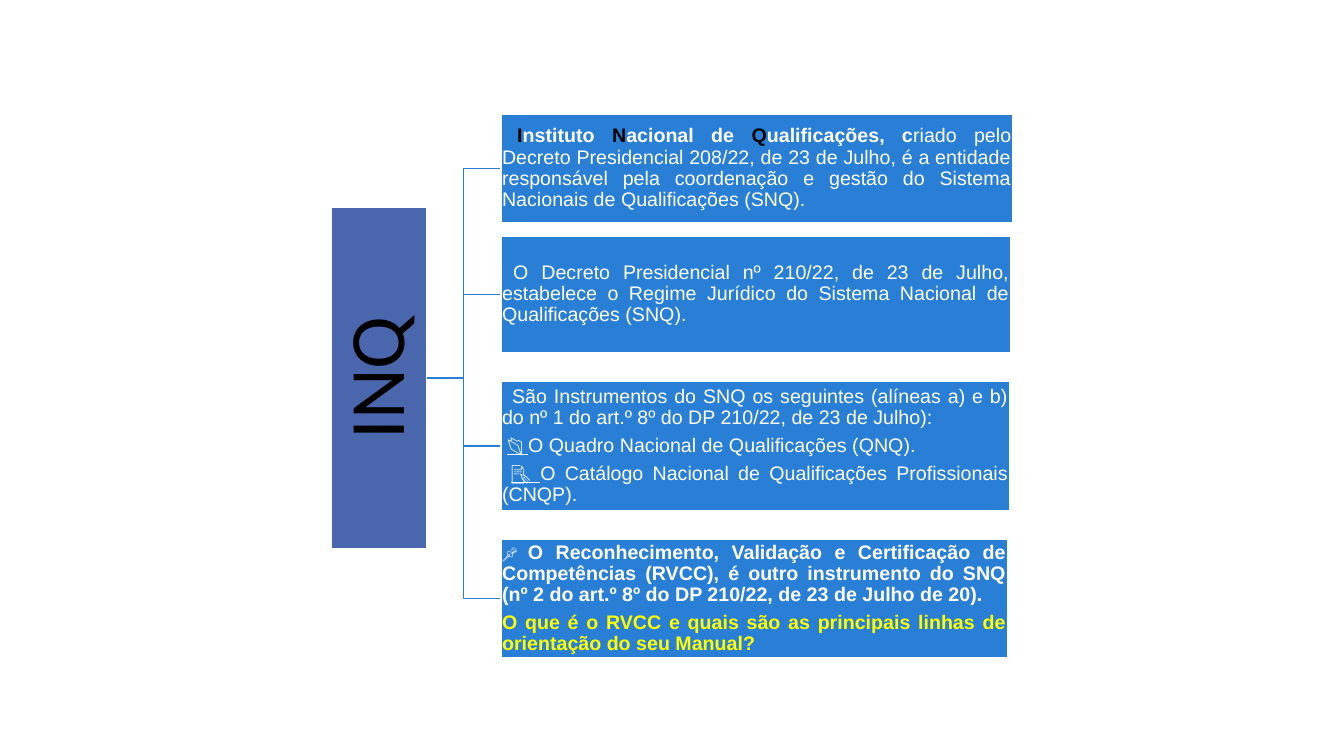
from pptx import Presentation
from pptx.dml.color import RGBColor
from pptx.enum.shapes import MSO_CONNECTOR, MSO_SHAPE
from pptx.enum.text import MSO_ANCHOR, PP_ALIGN
from pptx.oxml.ns import qn
from pptx.util import Inches, Pt

RECT, ELBOW = MSO_SHAPE.RECTANGLE, MSO_CONNECTOR.ELBOW
MIDDLE = MSO_ANCHOR.MIDDLE
CENTER, JUSTIFY = PP_ALIGN.CENTER, PP_ALIGN.JUSTIFY

BLUE = RGBColor(0x29, 0x7F, 0xD5)
INDIGO = RGBColor(0x4A, 0x66, 0xAC)
WHITE = RGBColor(0xFF, 0xFF, 0xFF)
BLACK = RGBColor(0x00, 0x00, 0x00)
YELLOW = RGBColor(0xFF, 0xFF, 0x00)

# Run formats that differ from the plain body text
PLAIN = {}
BOLD = {"bold": True}
INITIAL = {"bold": True, "color": BLACK}
QUESTION = {"bold": True, "color": YELLOW}
ICON = {"underline": True}
PIN = {"bold": True, "size": Pt(11), "name": "Calibri"}
TITLE = {"size": Pt(56), "name": "Calibri", "color": BLACK}


class Diagram:
    body = {"size": Pt(14), "name": "Arial", "color": WHITE}

    def __init__(self, slide):
        self.slide = slide

    def box(self, left, top, width, height, fill, paragraphs,
            align=JUSTIFY, inset=0.01, rotation=0):
        """Filled box; each paragraph is (first-line indent, runs)."""
        sp = self.slide.shapes.add_shape(
            RECT, Inches(left), Inches(top), Inches(width), Inches(height))
        sp.shadow.inherit = False
        sp.rotation = rotation
        sp.fill.solid()
        sp.fill.fore_color.rgb = fill
        sp.line.color.rgb = WHITE
        sp.line.width = Pt(1)
        tf = sp.text_frame
        frame = {"word_wrap": True, "vertical_anchor": MIDDLE}
        for side in ("left", "right", "top", "bottom"):
            frame[f"margin_{side}"] = Inches(inset)
        for key, value in frame.items():
            setattr(tf, key, value)
        for i, (indent, runs) in enumerate(paragraphs):
            p = tf.add_paragraph() if i else tf.paragraphs[0]
            p.alignment = align
            p.line_spacing = 0.9
            if i < len(paragraphs) - 1:
                p.space_after = Pt(4.7)
            pPr = p._p.get_or_add_pPr()
            pPr.set("marL", "0")
            pPr.set("indent", str(Inches(indent)))
            for text, style in runs:
                self.run(p, text, style)

    def run(self, p, text, style):
        r = p.add_run()
        r.text = text
        for key, value in {**self.body, **style}.items():
            if key == "color":
                r.font.color.rgb = value
            else:
                setattr(r.font, key, value)

    def branch(self, x1, y1, x2, y2):
        cxn = self.slide.shapes.add_connector(
            ELBOW, Inches(x1), Inches(y1), Inches(x2), Inches(y2))
        cxn.line.color.rgb = BLUE
        cxn.line.width = Pt(1)
        spPr = cxn._element.spPr
        spPr.append(spPr.makeelement(qn("a:effectLst"), {}))


# Branch boxes: top, width, height, paragraphs
BRANCHES = [
    (1.13, 5.07, 1.08, [
        (0.15, [("I", INITIAL), ("nstituto ", BOLD), ("N", INITIAL),
                ("acional de ", BOLD), ("Q", INITIAL),
                ("ualificações, c", BOLD),
                ("riado pelo Decreto Presidencial 208/22, de 23 de Julho, é a "
                 "entidade responsável pela coordenação e gestão do Sistema "
                 "Nacionais de Qualificações (SNQ).", PLAIN)])]),
    (2.34, 5.05, 1.16, [
        (0.11, [("O Decreto Presidencial nº 210/22, de 23 de Julho, estabelece "
                 "o Regime Jurídico do Sistema Nacional de Qualificações "
                 "(SNQ).", PLAIN)])]),
    (3.78, 5.04, 1.29, [
        (0.1, [("São Instrumentos do SNQ os seguintes (alíneas a) e b) do nº 1 "
                "do art.º 8º do DP 210/22, de 23 de Julho):", PLAIN)]),
        (0.05, [("📂 ", {**ICON, **BOLD}),
                ("O Quadro Nacional de Qualificações (QNQ).", PLAIN)]),
        (0.09, [("📝 ", ICON),
                ("O Catálogo Nacional de Qualificações Profissionais (CNQP).",
                 PLAIN)])]),
    (5.35, 5.02, 1.18, [
        (0, [("📌 ", PIN),
             ("O Reconhecimento, Validação e Certificação de Competências "
              "(RVCC), é outro instrumento do SNQ (nº 2 do art.º 8º do DP "
              "210/22, de 23 de Julho de 20).", BOLD)]),
        (0, [("O que é o RVCC e quais são as principais linhas de orientação "
              "do seu Manual?", QUESTION)])]),
]
ROOT_RIGHT, ROOT_MIDDLE, BRANCH_LEFT = 4.23, 3.75, 4.97


def main():
    prs = Presentation()
    prs.slide_width, prs.slide_height = Inches(13.33), Inches(7.5)
    diagram = Diagram(prs.slides.add_slide(prs.slide_layouts[6]))

    # Connecting lines, behind the boxes
    for top, width, height, paragraphs in BRANCHES:
        diagram.branch(ROOT_RIGHT, ROOT_MIDDLE, BRANCH_LEFT, top + height / 2)

    # Root box, turned to read upwards
    diagram.box(2.07, 3.28, 3.38, 0.94, INDIGO, [(0, [("INQ", TITLE)])],
                align=CENTER, inset=0.04, rotation=270)

    # Branch boxes
    for top, width, height, paragraphs in BRANCHES:
        diagram.box(BRANCH_LEFT, top, width, height, BLUE, paragraphs)

    prs.save("out.pptx")


if __name__ == "__main__":
    main()
